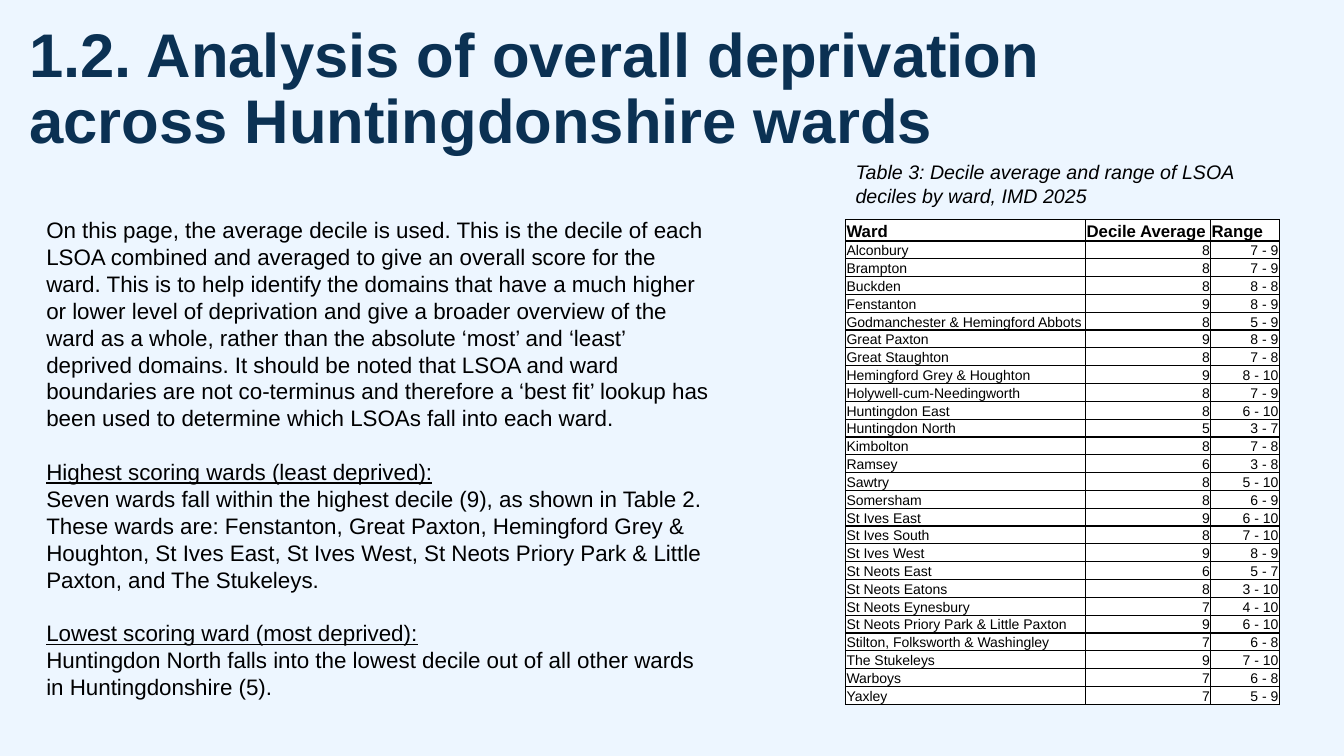
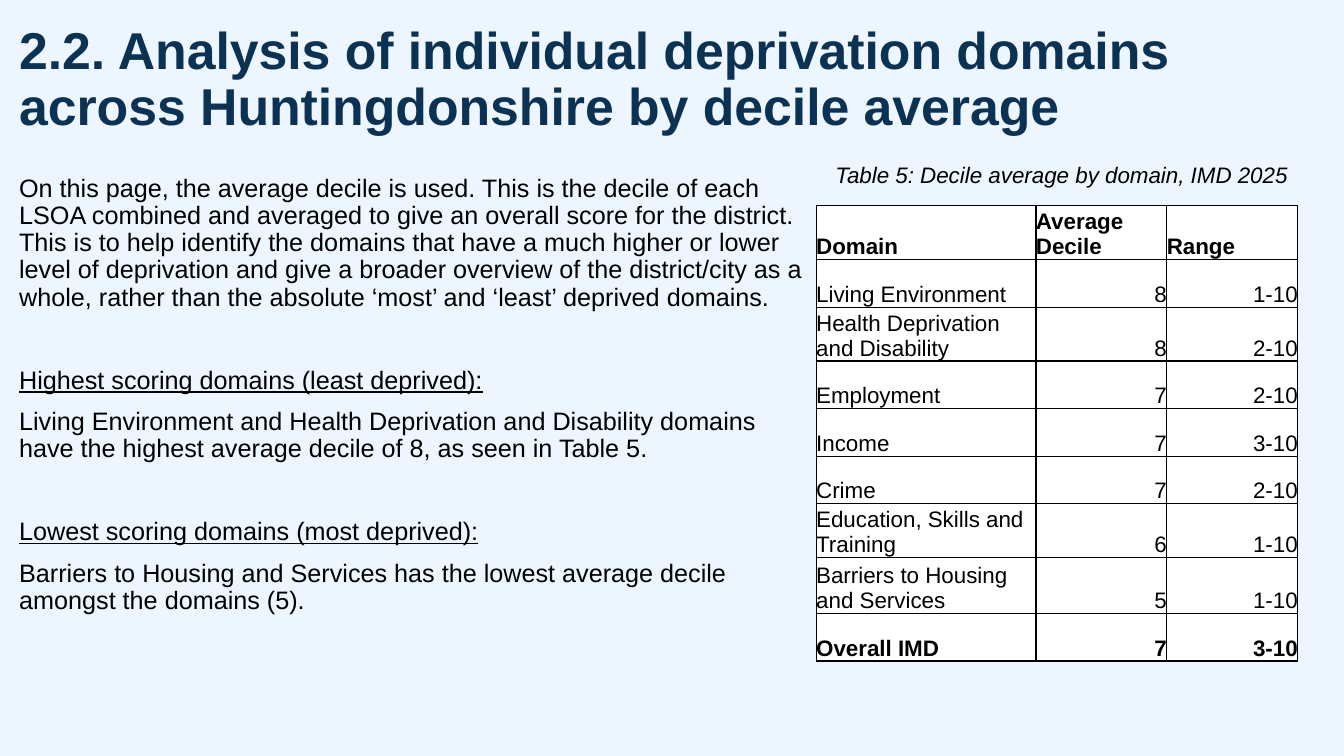
from lxml.etree import SubElement
from pptx import Presentation
from pptx.dml.color import RGBColor
from pptx.enum.text import MSO_ANCHOR, PP_ALIGN
from pptx.oxml.ns import qn
from pptx.util import Pt

SKY = RGBColor(0xED, 0xF6, 0xFF)
NAVY = RGBColor(0x0B, 0x31, 0x53)
BLACK = RGBColor(0, 0, 0)
WHITE = RGBColor(0xFF, 0xFF, 0xFF)
FONT = "Arial"

WARDS = [
    ("Ward", "Decile Average", "Range"),
    ("Alconbury", 8, "7 - 9"),
    ("Brampton", 8, "7 - 9"),
    ("Buckden", 8, "8 - 8"),
    ("Fenstanton", 9, "8 - 9"),
    ("Godmanchester & Hemingford Abbots", 8, "5 - 9"),
    ("Great Paxton", 9, "8 - 9"),
    ("Great Staughton", 8, "7 - 8"),
    ("Hemingford Grey & Houghton", 9, "8 - 10"),
    ("Holywell-cum-Needingworth", 8, "7 - 9"),
    ("Huntingdon East", 8, "6 - 10"),
    ("Huntingdon North", 5, "3 - 7"),
    ("Kimbolton", 8, "7 - 8"),
    ("Ramsey", 6, "3 - 8"),
    ("Sawtry", 8, "5 - 10"),
    ("Somersham", 8, "6 - 9"),
    ("St Ives East", 9, "6 - 10"),
    ("St Ives South", 8, "7 - 10"),
    ("St Ives West", 9, "8 - 9"),
    ("St Neots East", 6, "5 - 7"),
    ("St Neots Eatons", 8, "3 - 10"),
    ("St Neots Eynesbury", 7, "4 - 10"),
    ("St Neots Priory Park & Little Paxton", 9, "6 - 10"),
    ("Stilton, Folksworth & Washingley", 7, "6 - 8"),
    ("The Stukeleys", 9, "7 - 10"),
    ("Warboys", 7, "6 - 8"),
    ("Yaxley", 7, "5 - 9"),
]
DOMAINS = [
    ("Domain", "Average Decile", "Range"),
    ("Living Environment", 8, "1-10"),
    ("Health Deprivation and Disability", 8, "2-10"),
    ("Employment", 7, "2-10"),
    ("Income", 7, "3-10"),
    ("Crime", 7, "2-10"),
    ("Education, Skills and Training", 6, "1-10"),
    ("Barriers to Housing and Services", 5, "1-10"),
    ("Overall IMD", 7, "3-10"),
]
WARD_TEXT = (
    "On this page, the average decile is used. This is the decile of each LSOA "
    "combined and averaged to give an overall score for the ward. This is to help "
    "identify the domains that have a much higher or lower level of deprivation and "
    "give a broader overview of the ward as a whole, rather than the absolute ‘most’ "
    "and ‘least’ deprived domains. It should be noted that LSOA and ward boundaries "
    "are not co-terminus and therefore a ‘best fit’ lookup has been used to determine "
    "which LSOAs fall into each ward.",
    [("Highest scoring wards (least deprived):",
      "Seven wards fall within the highest decile (9), as shown in Table 2. These wards "
      "are: Fenstanton, Great Paxton, Hemingford Grey & Houghton, St Ives East, St Ives "
      "West, St Neots Priory Park & Little Paxton, and The Stukeleys."),
     ("Lowest scoring ward (most deprived):",
      "Huntingdon North falls into the lowest decile out of all other wards in "
      "Huntingdonshire (5).")],
)
DOMAIN_TEXT = (
    "On this page, the average decile is used. This is the decile of each LSOA "
    "combined and averaged to give an overall score for the district. This is to help "
    "identify the domains that have a much higher or lower level of deprivation and "
    "give a broader overview of the district/city as a whole, rather than the absolute "
    "‘most’ and ‘least’ deprived domains.",
    [("Highest scoring domains (least deprived):",
      "Living Environment and Health Deprivation and Disability domains have the highest "
      "average decile of 8, as seen in Table 5."),
     ("Lowest scoring domains (most deprived):",
      "Barriers to Housing and Services has the lowest average decile amongst the "
      "domains (5).")],
)


def style(para, size, color=BLACK, bold=False, italic=False):
    font = para.font
    font.name, font.size = FONT, Pt(size)
    font.bold, font.italic = bold, italic
    font.color.rgb = color


def add_box(slide, box, inset=True):
    """Add a wrapping text box and return its frame."""
    frame = slide.shapes.add_textbox(*map(Pt, box)).text_frame
    frame.word_wrap = True
    if not inset:
        frame.margin_left = frame.margin_right = 0
        frame.margin_top = frame.margin_bottom = 0
    return frame


def add_title(slide, box, text, size):
    para = add_box(slide, box, inset=False).paragraphs[0]
    para.text = text
    para.line_spacing = 0.9
    style(para, size, NAVY, bold=True)


def add_caption(slide, box, text, size):
    para = add_box(slide, box).paragraphs[0]
    para.text = text
    style(para, size, italic=True)


def add_body(slide, box, text, size, gap, step=0, lines=1.0, inset=True):
    """Place an intro and headed parts: gap before a heading, step after it."""
    intro, parts = text
    frame = add_box(slide, box, inset)
    rows = [(intro, 0, False)]
    for head, note in parts:
        rows += [(head, gap, True), (note, step, False)]
    for i, (words, space, under) in enumerate(rows):
        para = frame.add_paragraph() if i else frame.paragraphs[0]
        para.text = words
        para.line_spacing, para.space_before = lines, Pt(space)
        style(para, size)
        para.font.underline = under


def add_edges(cell):
    """Draw a thin black line on all four sides."""
    props = cell._tc.get_or_add_tcPr()
    for i, side in enumerate(("lnL", "lnR", "lnT", "lnB")):
        line = props.makeelement(qn(f"a:{side}"), {"w": str(Pt(1))})
        fill = SubElement(line, qn("a:solidFill"))
        SubElement(fill, qn("a:srgbClr"), val=str(BLACK))
        props.insert(i, line)


def add_grid(slide, spot, data, widths, heights, sizes, pad=0, total=False):
    """Place a table; sizes holds the header and row text sizes."""
    frame = slide.shapes.add_table(
        len(data), len(widths), *map(Pt, (*spot, sum(widths), sum(heights))))
    table = frame.table
    table.first_row = table.horz_banding = False
    for col, width in zip(table.columns, widths):
        col.width = Pt(width)
    for r, (values, height) in enumerate(zip(data, heights)):
        table.rows[r].height = Pt(height)
        bold = r == 0 or (total and r == len(data) - 1)
        for c, value in enumerate(values):
            cell = table.cell(r, c)
            cell.margin_left = cell.margin_right = cell.margin_top = Pt(pad)
            cell.margin_bottom = 0
            cell.vertical_anchor = MSO_ANCHOR.BOTTOM
            cell.fill.solid()
            cell.fill.fore_color.rgb = WHITE
            add_edges(cell)
            para = cell.text_frame.paragraphs[0]
            para.text = str(value)
            para.alignment = PP_ALIGN.RIGHT if r and c else PP_ALIGN.LEFT
            style(para, sizes[min(r, 1)], bold=bold)


def add_wards(slide):
    add_title(slide, (20.9, 17.3, 777, 96),
              "1.2. Analysis of overall deprivation across Huntingdonshire wards", 44)
    add_body(slide, (26, 151, 487.5, 395), WARD_TEXT, 16, gap=19.2)
    add_caption(slide, (604, 111, 330.5, 41),
                "Table 3: Decile average and range of LSOA deciles by ward, IMD 2025", 14)
    add_grid(slide, (604, 157), WARDS, (171.5, 89.3, 49),
             [12.66] * len(WARDS), (12, 10), pad=0.7)


def add_domains(slide):
    add_title(slide, (13.7, 18, 828, 96),
              "2.2. Analysis of individual deprivation domains across "
              "Huntingdonshire by decile average", 37)
    add_body(slide, (13.7, 125.3, 559.5, 361), DOMAIN_TEXT, 18,
             gap=40, step=10, lines=0.9, inset=False)
    add_grid(slide, (583, 147), DOMAINS, (157, 93.5, 93.5),
             (38, *[34] * 5, 38, 40, 34), (16, 16), total=True)
    add_caption(slide, (589.7, 111.6, 360, 26.6),
                "Table 5: Decile average by domain, IMD 2025", 16)


def main():
    deck = Presentation()
    deck.slide_width, deck.slide_height = Pt(960), Pt(540)
    back = deck.slide_master.background.fill
    back.solid()
    back.fore_color.rgb = SKY
    for build in (add_wards, add_domains):
        build(deck.slides.add_slide(deck.slide_layouts[6]))
    deck.save("out.pptx")


if __name__ == "__main__":
    main()
